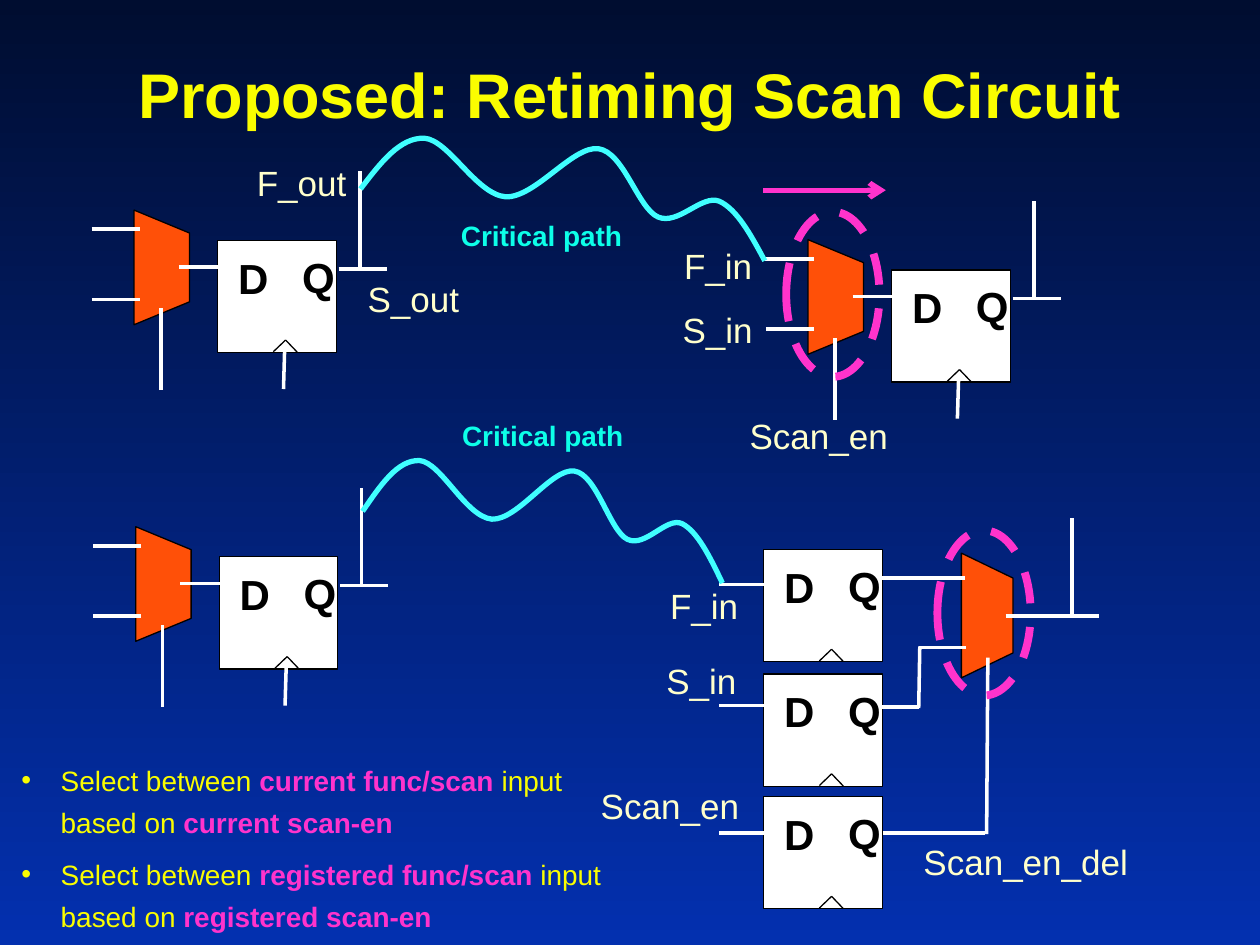
"""Build a slide that compares two scan circuits before and after retiming."""
from typing import NamedTuple

from lxml.etree import SubElement as Sub
from pptx import Presentation as Deck
from pptx.dml.color import RGBColor as Rgb
from pptx.enum.dml import MSO_LINE_DASH_STYLE as Dash
from pptx.enum.shapes import MSO_AUTO_SHAPE_TYPE as Form, MSO_CONNECTOR as Link
from pptx.enum.text import MSO_ANCHOR as Anchor, MSO_AUTO_SIZE as Fit, PP_ALIGN as Align
from pptx.oxml.ns import qn
from pptx.util import Pt

WHITE, BLACK, CREAM = "FFFFFF", "000000", "FFFFCC"
YELLOW, PINK, ORANGE = "FAFD00", "FF33CC", "FF5008"
CYAN, AQUA = "40FFFF", "0DFFE8"


class Run(NamedTuple):
    """Text with its look."""
    text: str
    size: float
    tint: str
    bold: bool = False


class Label(NamedTuple):
    """Free text at a place."""
    x: float
    y: float
    w: float
    h: float
    run: Run


class Wire(NamedTuple):
    """Straight line between two points."""
    x1: float
    y1: float
    x2: float
    y2: float
    wide: float = 2
    tint: str = WHITE


class Point(NamedTuple):
    """Place on the slide."""
    x: float
    y: float


class Item(NamedTuple):
    """Bullet box with its runs."""
    y: float
    w: float
    runs: list[Run]


def paint(part, tint: str) -> None:
    """Give a fill or line fill a solid colour."""
    part.solid()
    part.fore_color.rgb = Rgb.from_string(tint)


def place(shape, x: float, y: float, w: float, h: float) -> None:
    """Move and size a shape."""
    shape.left, shape.top, shape.width, shape.height = Pt(x), Pt(y), Pt(w), Pt(h)


def write(para, runs: list[Run]) -> None:
    """Add runs to a paragraph and set its spacing."""
    para.line_spacing = 1.25
    space = Sub(para._p.get_or_add_pPr(), qn("a:spcBef"))
    Sub(space, qn("a:spcPct")).set("val", "20000")
    for run in runs:
        part = para.add_run()
        part.text = run.text
        font = part.font
        font.name, font.size, font.bold = "Arial", Pt(run.size), run.bold
        font.color.rgb = Rgb.from_string(run.tint)


def label(tree, item: Label) -> None:
    """Add a text box that does not wrap."""
    box = tree.add_textbox(Pt(item.x), Pt(item.y), Pt(item.w), Pt(item.h))
    frame = box.text_frame
    frame.word_wrap, frame.auto_size = False, Fit.SHAPE_TO_FIT_TEXT
    write(frame.paragraphs[0], [item.run])


def wire(tree, item: Wire, at: Point = Point(0, 0), tip: bool = False) -> None:
    """Add a line, shifted by a place, with an optional arrow tip."""
    line = tree.add_connector(Link.STRAIGHT, Pt(at.x + item.x1), Pt(at.y + item.y1),
                              Pt(at.x + item.x2), Pt(at.y + item.y2))
    paint(line.line.fill, item.tint)
    line.line.width = Pt(item.wide)
    if tip:
        Sub(line.line._get_or_add_ln(), qn("a:tailEnd")).set("type", "arrow")
    Sub(line._element.spPr, qn("a:effectLst"))


def solid(tree, form: Form, x: float, y: float, w: float, h: float, tint: str):
    """Add a filled shape with a thin black outline."""
    shape = tree.add_shape(form, Pt(x), Pt(y), Pt(w), Pt(h))
    shape.shadow.inherit = False
    paint(shape.fill, tint)
    paint(shape.line.fill, BLACK)
    shape.line.width = Pt(0.75)
    return shape


def mux(tree, mid: Point, w: float, h: float) -> None:
    """Add a multiplexer around its centre."""
    shape = solid(tree, Form.FLOWCHART_MANUAL_OPERATION,
                  mid.x - h / 2, mid.y - w / 2, h, w, ORANGE)
    shape.rotation = 270


def flop(tree, at: Point) -> None:
    """Add a flip-flop with its pins and clock mark."""
    solid(tree, Form.RECTANGLE, at.x, at.y, 67.7, 64.1, WHITE)
    label(tree, Label(at.x + 4.5, at.y - 4, 20, 27.4, Run("D", 24, BLACK, True)))
    label(tree, Label(at.x + 41, at.y - 4.5, 21, 27.4, Run("Q", 24, BLACK, True)))
    wire(tree, Wire(31.7, 63.7, 38.7, 57, 0.75, BLACK), at)
    wire(tree, Wire(38.7, 57, 45.4, 64, 0.75, BLACK), at)


def stage(tree, at: Point) -> None:
    """Add a flip-flop fed by a multiplexer, with its wires."""
    mux(tree, Point(at.x - 32, at.y + 15.5), 31.7, 65.5)
    flop(tree, at)
    for item in STUBS:
        wire(tree, item, at)


def curve(tree, at: Point, scale: float) -> None:
    """Add the critical path as a smooth open curve."""
    pen = tree.build_freeform(Pt(at.x), Pt(at.y))
    pen.add_line_segments([(Pt(at.x + x * scale), Pt(at.y + y)) for x, y in WAVE], close=False)
    shape = pen.convert_to_shape()
    shape.shadow.inherit = False
    shape.fill.background()
    paint(shape.line.fill, CYAN)
    shape.line.width = Pt(3)
    geo = next(shape._element.iter(qn("a:path")))
    legs = geo.findall(qn("a:lnTo"))
    for i in range(0, len(legs), 3):
        bend = Sub(geo, qn("a:cubicBezTo"))
        for leg in legs[i:i + 3]:
            bend.append(leg[0])
            geo.remove(leg)


def ring(tree, x: float, y: float) -> None:
    """Add a dashed ring around a multiplexer."""
    shape = tree.add_shape(Form.OVAL, Pt(x), Pt(y), Pt(53.3), Pt(94.3))
    shape.shadow.inherit = False
    shape.fill.background()
    paint(shape.line.fill, PINK)
    shape.line.width, shape.line.dash_style = Pt(4.5), Dash.DASH


def bullet(shape, item: Item) -> None:
    """Fill a body placeholder with one bullet."""
    place(shape, 5, item.y, item.w, 54.7)
    shape.text_frame.auto_size = Fit.SHAPE_TO_FIT_TEXT
    para = shape.text_frame.paragraphs[0]
    write(para, item.runs)
    props = para._p.get_or_add_pPr()
    props.set("marL", str(Pt(22.5)))
    props.set("indent", str(-Pt(22.5)))
    Sub(Sub(props, qn("a:buClr")), qn("a:srgbClr")).set("val", YELLOW)
    Sub(props, qn("a:buFont")).set("typeface", "Arial")
    Sub(props, qn("a:buChar")).set("char", "•")


STUBS = [Wire(-22.3, 15.3, 4.3, 15.3), Wire(69, 16.5, 96.5, 16.5),
         Wire(-72, 33.8, -44.6, 33.8), Wire(-72.2, -6.3, -44.6, -6.3),
         Wire(-32.4, 85.7, -32.4, 38.9), Wire(37.5, 85, 38.2, 61.2),
         Wire(81.2, 15.3, 81.2, -39.6, 2.25)]
WAVE = [(11.5, -15), (22.5, -29.5), (36.5, -29), (50.5, -28), (66, 3), (83, 4.5),
        (100, 5), (121.5, -25), (136, -23), (150.5, -21), (158.5, 11), (170, 16),
        (181.5, 21), (195, 3), (205, 7), (215, 11.5), (223, 26), (231, 41)]
WIRES = [Wire(574.6, 352, 601.2, 352), Wire(601.2, 352, 627.8, 352),
         Wire(525, 370, 552, 370), Wire(502, 330.4, 551.5, 330.4),
         Wire(563.8, 476.6, 564.5, 375.8), Wire(612.7, 351, 612.7, 295.9, 2.25),
         Wire(504, 404, 525, 404), Wire(525, 404.6, 525.6, 369.4),
         Wire(504.7, 476, 563, 476)]
WIRES += [Wire(411, y, 437.8, y) for y in (334, 403.2, 476)]
NAMES = [("Scan_en", 421.2, 227.5, 94.3), ("S_in", 383, 167, 54.7),
         ("F_in", 383.8, 130.3, 54), ("S_in", 373.7, 367.2, 54.7),
         ("F_in", 375.8, 324.7, 54), ("Scan_en", 336.2, 438.5, 94.3),
         ("Scan_en_del", 520.6, 470.9, 132.5), ("F_out", 139.7, 82.8, 66.2),
         ("S_out", 203, 149, 67)]
ITEMS = [Item(y, w, [Run("Select between ", 16, YELLOW), Run(f"{kind} func/scan ", 16, PINK, True),
                     Run("input based on ", 16, YELLOW), Run(f"{kind} scan-en", 16, PINK, True)])
         for kind, y, w in (("current", 427.7, 326.9), ("registered", 481.7, 357.1))]


def main() -> None:
    """Draw the slide and save it."""
    deck = Deck()
    deck.slide_width, deck.slide_height = Pt(720), Pt(540)
    slide = deck.slides.add_slide(deck.slide_layouts[3])
    tree = slide.shapes
    fill = slide.background.fill
    fill.gradient()
    fill.gradient_angle = 270
    for stop, tint in zip(fill.gradient_stops, ("000D30", "0330AF")):
        stop.color.rgb = Rgb.from_string(tint)

    title, *bodies = slide.placeholders
    place(title, 0, 26.6, 720, 51.8)
    title.text_frame.vertical_anchor = Anchor.BOTTOM
    title.text_frame.auto_size = Fit.NONE
    head = title.text_frame.paragraphs[0]
    head.alignment = Align.CENTER
    write(head, [Run("Proposed: Retiming Scan Circuit", 36, YELLOW, True)])
    for body, item in zip(bodies, ITEMS):
        bullet(body, item)

    for at in (Point(124.5, 137.3), Point(509.6, 154.2), Point(125.4, 318.2)):
        stage(tree, at)
    mux(tree, Point(564.1, 351.7), 29.5, 71.3)
    for y in (314, 385.2, 455.2):
        flop(tree, Point(436.5, y))
    for item in WIRES:
        wire(tree, item)
    curve(tree, Point(206, 108), 1)
    curve(tree, Point(207.2, 292.2), 0.89)
    ring(tree, 449.3, 121)
    ring(tree, 535.7, 303.1)
    wire(tree, Wire(436.3, 108.7, 506.2, 108.7, 3, PINK), tip=True)
    for text, x, y, w in NAMES:
        label(tree, Label(x, y, w, 31.7, Run(text, 20, CREAM)))
    for x, y in ((256.3, 116.6), (257, 231.1)):
        label(tree, Label(x, y, 108, 31, Run("Critical path", 16, AQUA, True)))
    deck.save("out.pptx")


if __name__ == "__main__":
    main()
